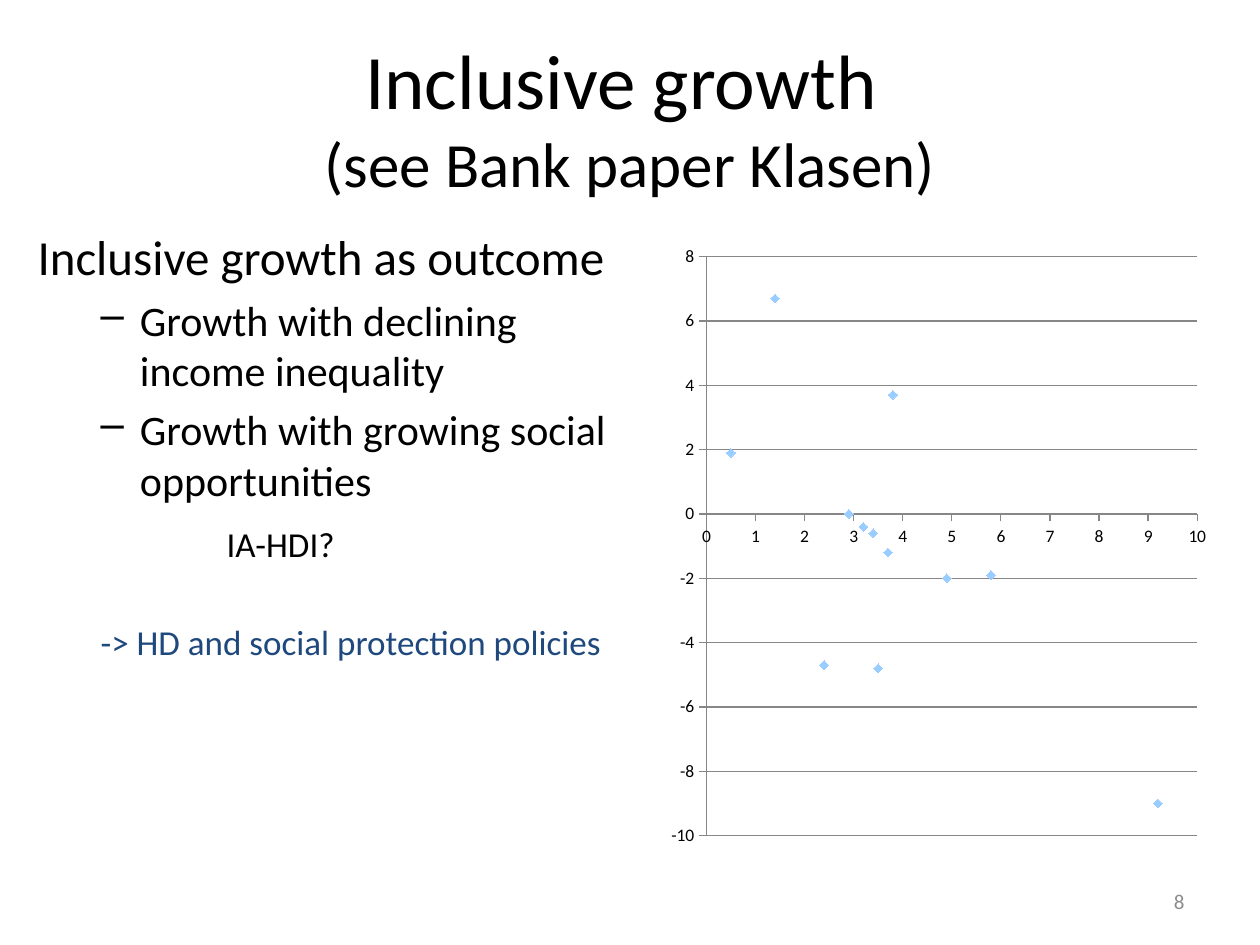
from dataclasses import dataclass

from pptx import Presentation
from pptx.chart.data import XyChartData
from pptx.dml.color import RGBColor
from pptx.enum.chart import XL_CHART_TYPE, XL_MARKER_STYLE, XL_TICK_MARK
from pptx.enum.text import MSO_ANCHOR, MSO_AUTO_SIZE, PP_ALIGN
from pptx.oxml import parse_xml
from pptx.oxml.ns import nsdecls
from pptx.util import Pt

FONT = "Calibri"
BLACK = RGBColor(0x00, 0x00, 0x00)
NAVY = RGBColor(0x1F, 0x49, 0x7D)
GRAY = RGBColor(0x8C, 0x8C, 0x8C)
AXIS_GRAY = RGBColor(0x87, 0x87, 0x87)
LIGHT_BLUE = RGBColor(0x99, 0xCC, 0xFF)


@dataclass(frozen=True)
class Box:
    left: float
    top: float
    width: float
    height: float

    def lengths(self) -> tuple:
        return Pt(self.left), Pt(self.top), Pt(self.width), Pt(self.height)


@dataclass(frozen=True)
class Line:
    text: str
    size: float
    indent: float = 0
    space_before: float = 5
    dash: bool = False
    color: RGBColor = BLACK


TITLE_BOX = Box(36, 21.6, 648, 90)
BODY_BOX = Box(14.4, 126, 340, 356.4)
CHART_BOX = Box(377.3, 133.9, 318.2, 356.4)
NUMBER_BOX = Box(516, 500.5, 168, 28.8)

BODY_LINES = [
    Line("Inclusive growth as outcome", 28),
    Line("Growth with declining income inequality", 24, 58.5, dash=True),
    Line("Growth with growing social opportunities", 24, 58.5, dash=True),
    Line("IA-HDI?", 20, 108, space_before=10),
    Line("-> HD and social protection policies", 20, 36, space_before=32, color=NAVY),
]

POINTS = [
    (3.2, -0.4), (3.5, -4.8), (1.4, 6.7), (9.2, -9), (2.9, 0), (2.4, -4.7),
    (4.9, -2), (3.7, -1.2), (3.8, 3.7), (3.4, -0.6), (5.8, -1.9), (0.5, 1.9),
]


def add_run(paragraph, text: str, size: float, color: RGBColor = BLACK) -> None:
    run = paragraph.add_run()
    run.text = text
    run.font.name = FONT
    run.font.size = Pt(size)
    run.font.color.rgb = color


def add_text_frame(slide, box: Box):
    frame = slide.shapes.add_textbox(*box.lengths()).text_frame
    frame.word_wrap = True
    return frame


def add_title(slide) -> None:
    title = slide.shapes.title
    title.left, title.top, title.width, title.height = TITLE_BOX.lengths()
    frame = title.text_frame
    frame.auto_size = MSO_AUTO_SIZE.NONE
    frame.vertical_anchor = MSO_ANCHOR.MIDDLE
    paragraph = frame.paragraphs[0]
    paragraph.alignment = PP_ALIGN.CENTER
    add_run(paragraph, "Inclusive growth ", 44)
    paragraph.add_line_break()
    add_run(paragraph, "(see Bank paper Klasen)", 36)


def add_body(slide, lines: list[Line]) -> None:
    frame = add_text_frame(slide, BODY_BOX)
    for index, line in enumerate(lines):
        paragraph = frame.add_paragraph() if index else frame.paragraphs[0]
        paragraph.space_before = Pt(line.space_before)
        properties = paragraph._p.get_or_add_pPr()
        properties.set("marL", str(Pt(line.indent)))
        properties.set("indent", str(Pt(-22.5 if line.dash else 0)))
        if line.dash:
            properties.append(parse_xml(f'<a:buChar {nsdecls("a")} char="–"/>'))
        add_run(paragraph, line.text, line.size, line.color)


def format_axis(axis, low: float, high: float, step: float) -> None:
    axis.minimum_scale, axis.maximum_scale, axis.major_unit = low, high, step
    axis.major_tick_mark = XL_TICK_MARK.OUTSIDE
    axis.minor_tick_mark = XL_TICK_MARK.NONE
    axis.format.line.color.rgb = AXIS_GRAY
    axis.format.line.width = Pt(0.75)
    labels = axis.tick_labels
    labels.number_format = "General"
    labels.number_format_is_linked = False


def add_scatter(slide, points: list[tuple[float, float]]) -> None:
    data = XyChartData()
    series_data = data.add_series("Series 1")
    for x, y in points:
        series_data.add_data_point(x, y)
    chart = slide.shapes.add_chart(
        XL_CHART_TYPE.XY_SCATTER, *CHART_BOX.lengths(), data
    ).chart
    chart.has_legend = False
    chart.has_title = False
    chart.font.name = FONT
    chart.font.size = Pt(10)
    chart.font.color.rgb = BLACK
    chart.plots[0].vary_by_categories = False

    format_axis(chart.category_axis, 0, 10, 1)
    format_axis(chart.value_axis, -10, 8, 2)
    chart.category_axis.has_major_gridlines = False
    chart.value_axis.has_major_gridlines = True
    grid_line = chart.value_axis.major_gridlines.format.line
    grid_line.color.rgb = AXIS_GRAY
    grid_line.width = Pt(0.75)

    series = chart.plots[0].series[0]
    series.smooth = False
    series.format.line.fill.background()
    marker = series.marker
    marker.style = XL_MARKER_STYLE.DIAMOND
    marker.size = 5
    marker.format.fill.solid()
    marker.format.fill.fore_color.rgb = LIGHT_BLUE
    marker.format.line.color.rgb = LIGHT_BLUE


def add_slide_number(slide, number: int) -> None:
    frame = add_text_frame(slide, NUMBER_BOX)
    frame.vertical_anchor = MSO_ANCHOR.MIDDLE
    paragraph = frame.paragraphs[0]
    paragraph.alignment = PP_ALIGN.RIGHT
    add_run(paragraph, str(number), 12, GRAY)


def main() -> None:
    presentation = Presentation()
    presentation.slide_width = Pt(720)
    presentation.slide_height = Pt(540)
    title_only = presentation.slide_layouts[5]
    slide = presentation.slides.add_slide(title_only)
    add_title(slide)
    add_body(slide, BODY_LINES)
    add_scatter(slide, POINTS)
    add_slide_number(slide, 8)
    presentation.save("out.pptx")


if __name__ == "__main__":
    main()
